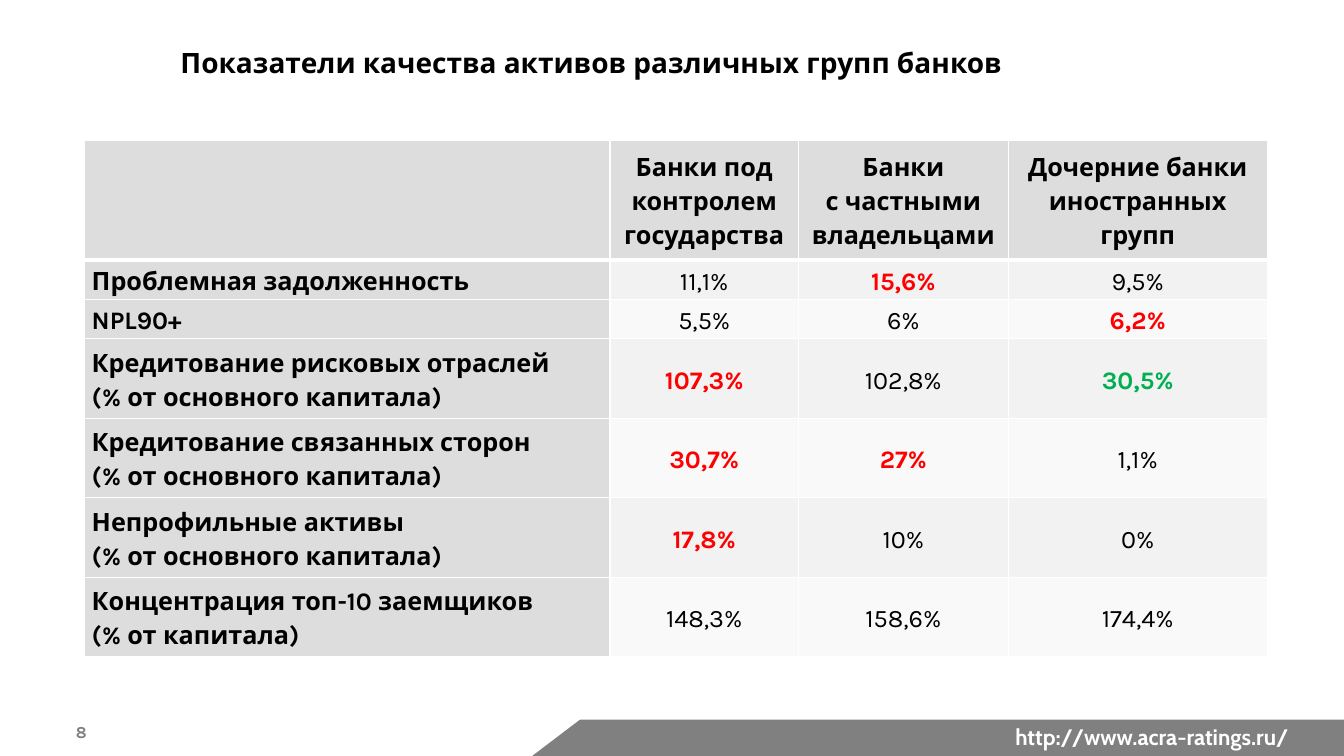
from lxml import etree
from pptx import Presentation
from pptx.dml.color import RGBColor
from pptx.enum.shapes import MSO_SHAPE as Shape
from pptx.enum.text import MSO_ANCHOR as Anchor, MSO_AUTO_SIZE as Fit, PP_ALIGN as Align
from pptx.oxml.ns import qn
from pptx.util import Inches, Pt


def color(code):
    return RGBColor.from_string(code)


def write(frame, text, size, code="000000", bold=True, align=Align.LEFT, face="Karla"):
    para = frame.paragraphs[0]
    para.alignment = align
    for num, line in enumerate(text.split("\n")):
        if num:
            para.add_line_break()
        run = para.add_run()
        run.text = line
        run.font.name = face
        run.font.size = Pt(size)
        run.font.bold = bold
        run.font.color.rgb = color(code)
    return para


deck = Presentation()
deck.slide_width, deck.slide_height = Inches(13.33), Inches(7.5)
slide = deck.slides.add_slide(deck.slide_layouts[5])
shapes = slide.shapes

for kind, box, code in [
    (Shape.RECTANGLE, (5.2, 7.14, 8.13, 0.36), "808080"),
    (Shape.RIGHT_TRIANGLE, (5.2, 7.1, 0.58, 0.44), "FFFFFF"),
]:
    part = shapes.add_shape(kind, *map(Inches, box))
    part.shadow.inherit = False
    part.fill.solid()
    part.fill.fore_color.rgb = color(code)
    if kind == Shape.RECTANGLE:
        part.line.fill.background()
    else:
        part.line.color.rgb = color(code)
        part.line.width = Pt(2)
        part._element.spPr.xfrm.set("flipV", "1")

title = shapes.title
title.left, title.top, title.width, title.height = map(Inches, (1.69, 0.38, 11.35, 0.47))
title.text_frame.auto_size = Fit.NONE
title.text_frame.vertical_anchor = Anchor.MIDDLE
write(title.text_frame, "Показатели качества активов различных групп банков", 20)

for text, box, size, code, face, anchor in [
    ("8", (0.36, 7.06, 0.6, 0.4), 12, "7F7F7F", "Karla", Anchor.MIDDLE),
    ("http://www.acra-ratings.ru/", (9.34, 7.12, 3.54, 0.37), 16, "FFFFFF", "Cabin", Anchor.TOP),
]:
    frame = shapes.add_textbox(*map(Inches, box)).text_frame
    frame.word_wrap = True
    frame.vertical_anchor = anchor
    write(frame, text, size, code, align=Align.RIGHT, face=face)

share = "\n(% от основного капитала)"
rows = [
    ["", "Банки под контролем государства", "Банки\nс частными владельцами",
     "Дочерние банки иностранных групп"],
    ["Проблемная задолженность", "11,1%", "15,6%", "9,5%"],
    ["NPL90+", "5,5%", "6%", "6,2%"],
    ["Кредитование рисковых отраслей" + share, "107,3%", "102,8%", "30,5%"],
    ["Кредитование связанных сторон" + share, "30,7%", "27%", "1,1%"],
    ["Непрофильные активы" + share, "17,8%", "10%", "0%"],
    ["Концентрация топ-10 заемщиков\n(% от капитала)", "148,3%", "158,6%", "174,4%"],
]
marks = {(1, 2): "FF0000", (2, 3): "FF0000", (3, 1): "FF0000", (3, 3): "00B050",
         (4, 1): "FF0000", (4, 2): "FF0000", (5, 1): "FF0000"}
wides = [5.21, 1.87, 2.08, 2.57]
highs = [1.19] + [0.39] * 2 + [0.79] * 4

table = shapes.add_table(len(rows), len(wides), Inches(0.84), Inches(1.39),
                         Inches(sum(wides)), Inches(sum(highs))).table
for col, wide in zip(table.columns, wides):
    col.width = Inches(wide)
for r, (row, high) in enumerate(zip(rows, highs)):
    table.rows[r].height = Inches(high)
    for c, text in enumerate(row):
        cell = table.cell(r, c)
        cell.vertical_anchor = Anchor.MIDDLE
        cell.margin_left = cell.margin_right = Inches(0.07)
        cell.margin_top = cell.margin_bottom = 0
        head = r == 0 or c == 0
        props = cell._tc.get_or_add_tcPr()
        for side in "LRTB":
            thick = (r, side) in [(0, "B"), (1, "T")]
            edge = etree.SubElement(props, qn("a:ln" + side), w=str(Pt(3 if thick else 1)))
            fill = etree.SubElement(edge, qn("a:solidFill"))
            etree.SubElement(fill, qn("a:srgbClr"), val="FFFFFF")
        cell.fill.solid()
        cell.fill.fore_color.rgb = color("DDDDDD" if head else "F2F2F2" if r % 2 else "F9F9F9")
        if text:
            para = write(cell.text_frame, text, 18, marks.get((r, c), "000000"),
                         head or (r, c) in marks, Align.CENTER if c else Align.LEFT)
            para.line_spacing = 1.15

deck.save("out.pptx")
